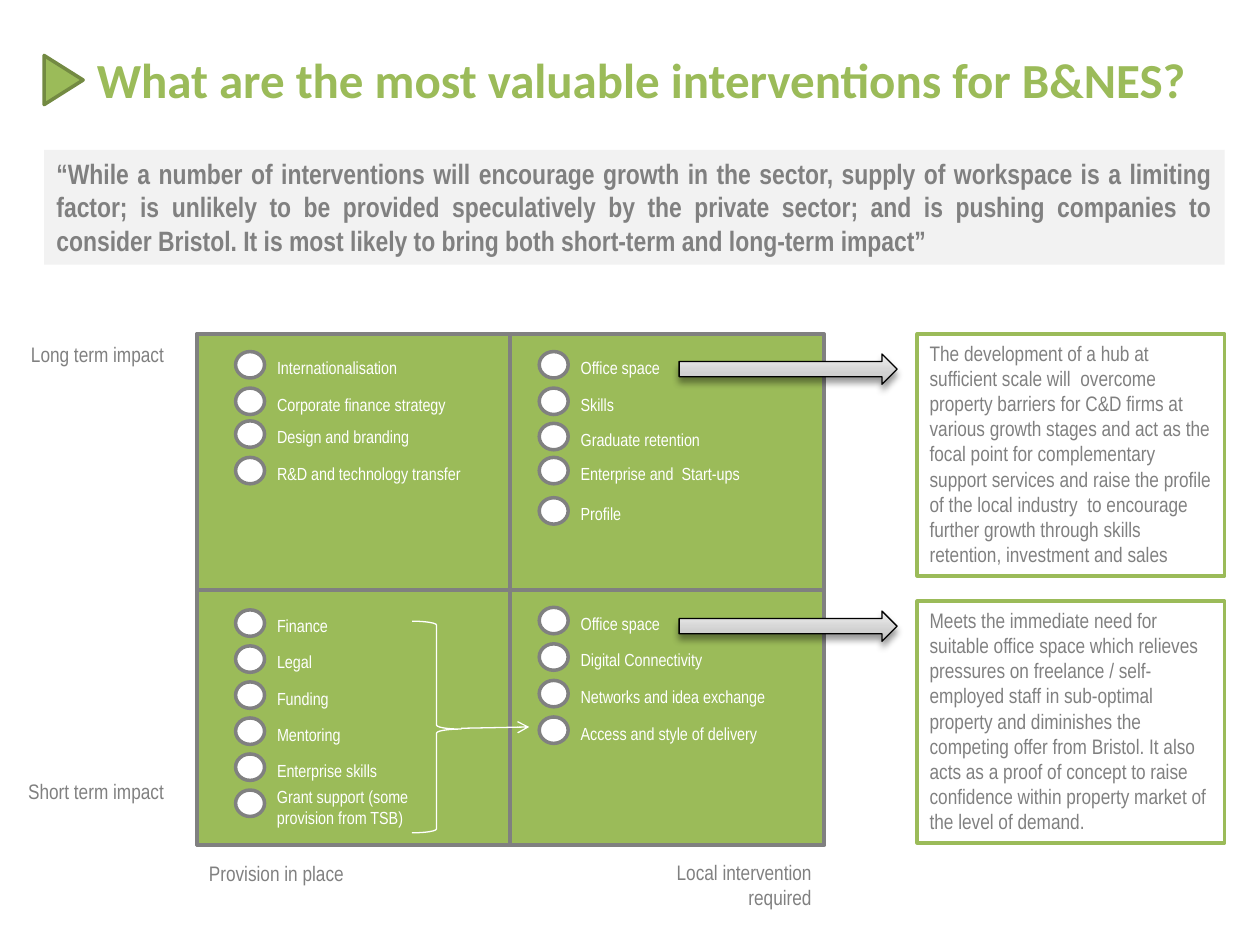
import pptx
import pptx.util
from pptx.dml.color import RGBColor
from pptx.enum.dml import MSO_LINE
from pptx.enum.shapes import MSO_CONNECTOR, MSO_SHAPE
from pptx.enum.text import MSO_ANCHOR, MSO_AUTO_SIZE, PP_ALIGN
from pptx.oxml import parse_xml
from pptx.oxml.ns import nsdecls

GREEN = RGBColor(0x9B, 0xBB, 0x59)
MOSS = RGBColor(0x73, 0x8A, 0x42)
GREY = RGBColor(0x80, 0x80, 0x80)
PALE = RGBColor(0xF2, 0xF2, 0xF2)
WHITE = RGBColor(0xFF, 0xFF, 0xFF)
BLACK = RGBColor(0, 0, 0)

# The slide is a grid of 100 columns by 75 rows of square cells.
WIDE, HIGH = 100, 75
CELL = pptx.util.Inches(10) // WIDE

LEFT, TOP, COL, ROW = 15.6, 26.5, 24.9, 20.3  # the two-by-two matrix
DOT_W, DOT_H = 2.3, 2.1

LISTS = [  # column of the dots, rows of the dots, labels
    (18.7, [27.9, 30.8, 33.4, 36.3],
     ["Internationalisation", "Corporate finance strategy",
      "Design and branding", "R&D and technology transfer"]),
    (42.8, [27.9, 30.8, 33.6, 36.3, 39.5],
     ["Office space", "Skills", "Graduate retention",
      "Enterprise and  Start-ups", "Profile"]),
    (18.7, [48.4 + 2.86 * n for n in range(6)],
     ["Finance", "Legal", "Funding", "Mentoring", "Enterprise skills",
      "Grant support (some provision from TSB)"]),
    (42.8, [48.2 + 2.9 * n for n in range(4)],
     ["Office space", "Digital Connectivity", "Networks and idea exchange",
      "Access and style of delivery"]),
]

NOTES = [
    "The development of a hub at sufficient scale will  overcome property "
    "barriers for C&D firms at various growth stages and act as the focal "
    "point for complementary support services and raise the profile of the "
    "local industry  to encourage further growth through skills retention, "
    "investment and sales",
    "Meets the immediate need for suitable office space which relieves "
    "pressures on freelance / self-employed staff in sub-optimal property "
    "and diminishes the  competing offer from Bristol. It also acts as a "
    "proof of concept to raise confidence within property market of the "
    "level of demand.",
]

QUOTE = (
    "“While a number of interventions will encourage growth in the sector, "
    "supply of workspace is a limiting factor; is unlikely to be provided "
    "speculatively by the private sector; and is pushing companies to "
    "consider Bristol. It is most likely to bring both short-term and "
    "long-term impact”")


def cells(*nums):
    """Turn grid cells into lengths."""
    return [round(n * CELL) for n in nums]


def write(shape, text, size, color, bold=False, align=PP_ALIGN.LEFT,
          font="Arial Narrow", anchor=MSO_ANCHOR.TOP, grow=True):
    frame = shape.text_frame
    frame.text = text
    frame.word_wrap = True
    frame.vertical_anchor = anchor
    if grow:
        frame.auto_size = MSO_AUTO_SIZE.SHAPE_TO_FIT_TEXT
    para = frame.paragraphs[0]
    para.alignment = align
    face = para.runs[0].font
    face.name, face.size, face.bold = font, pptx.util.Pt(size), bold
    face.color.rgb = color


def label(slide, box, text, size, color, **look):
    write(slide.shapes.add_textbox(*cells(*box)), text, size, color, **look)


def block(slide, kind, box, fill=None, line=None, width=2):
    shape = slide.shapes.add_shape(kind, *cells(*box))
    shape.shadow.inherit = False
    if fill is None:
        shape.fill.background()
    else:
        shape.fill.solid()
        shape.fill.fore_color.rgb = fill
    if line is None:
        shape.line.fill.background()
    else:
        shape.line.color.rgb = line
        shape.line.width = pptx.util.Pt(width)
    return shape


def rule(slide, ends, color, width):
    line = slide.shapes.add_connector(MSO_CONNECTOR.STRAIGHT, *cells(*ends))
    line.line.color.rgb = color
    line.line.width = pptx.util.Pt(width)
    line._element.spPr.append(parse_xml(f"<a:effectLst {nsdecls('a')}/>"))
    return line


def matrix(slide):
    right, base = LEFT + 2 * COL, TOP + 2 * ROW
    area = block(slide, MSO_SHAPE.RECTANGLE,
                 (LEFT, TOP, 2 * COL, 2 * ROW), GREEN, GREY)
    for n in range(3):
        x, y = LEFT + n * COL, TOP + n * ROW
        down = rule(slide, (x, TOP, x, base), GREY, 2.25)
        across = rule(slide, (LEFT, y, right, y), GREY, 2.25)
        if n == 1:
            down.begin_connect(area, 0)
            down.end_connect(area, 2)
            across.begin_connect(area, 1)
            across.end_connect(area, 3)


def items(slide, x, tops, names):
    """Draw a list of dots with their labels centred beside them."""
    for top, name in zip(tops, names):
        block(slide, MSO_SHAPE.OVAL, (x, top, DOT_W, DOT_H), WHITE, GREY)
        wide, high = (15.6, 4) if len(name) > 30 else (17.9, 2.5)
        mid = top + DOT_H / 2 + 0.15
        label(slide, (x + DOT_W, mid - high / 2, wide, high), name, 10, WHITE)


def brace(slide):
    """Draw the brace and the thin arrow that leads from it."""
    shape = block(slide, MSO_SHAPE.RIGHT_BRACE, (32.7, 49.3, 3.9, 16.8),
                  None, WHITE, 0.75)
    shape.adjustments[0], shape.adjustments[1] = 0.08, 0.51
    line = rule(slide, (36.6, 57.8, 42, 57.7), WHITE, 0.75)
    line.line.dash_style = MSO_LINE.SOLID
    line.line._get_or_add_ln().append(
        parse_xml(f'<a:tailEnd {nsdecls("a")} type="arrow"/>'))


def arrow(slide, top):
    """Draw a block arrow with a grey gradient and a soft shadow."""
    shape = block(slide, MSO_SHAPE.RIGHT_ARROW, (53.9, top, 17.3, 2.4),
                  WHITE, BLACK, 0.75)
    stops = "".join(
        f'<a:gs pos="{at * 1000}"><a:srgbClr val="{tone}"/></a:gs>'
        for at, tone in [(0, "BDBDBD"), (35, "D1D1D1"), (100, "EEEEEE")])
    props = shape._element.spPr
    props.replace(props.find("{*}solidFill"), parse_xml(
        f'<a:gradFill {nsdecls("a")} rotWithShape="1"><a:gsLst>{stops}'
        '</a:gsLst><a:lin ang="16200000" scaled="0"/></a:gradFill>'))
    props.replace(props.find("{*}effectLst"), parse_xml(
        f'<a:effectLst {nsdecls("a")}><a:outerShdw blurRad="50800" '
        'dist="38100" dir="5400000" rotWithShape="0">'
        '<a:srgbClr val="000000"><a:alpha val="40000"/></a:srgbClr>'
        '</a:outerShdw></a:effectLst>'))


def main():
    deck = pptx.Presentation()
    deck.slide_width, deck.slide_height = cells(WIDE, HIGH)
    slide = deck.slides.add_slide(deck.slide_layouts[6])

    label(slide, (6.7, 0, 93.3, 12.5),
          "What are the most valuable interventions for B&NES?", 28, GREEN,
          bold=True, font="Calibri", anchor=MSO_ANCHOR.MIDDLE, grow=False)
    mark = block(slide, MSO_SHAPE.ISOSCELES_TRIANGLE, (3.1, 4.8, 3.9, 3.1),
                 GREEN, MOSS)
    mark.rotation = 90
    banner = block(slide, MSO_SHAPE.RECTANGLE, (3.5, 11.9, 93.7, 9.1), PALE)
    write(banner, QUOTE, 16, GREY, bold=True, align=PP_ALIGN.JUSTIFY)

    matrix(slide)
    for x, y, high, text, align in [
            (0, 26.6, 2.8, "Long term impact", PP_ALIGN.RIGHT),
            (0, 61.3, 2.8, "Short term impact", PP_ALIGN.RIGHT),
            (51.4, 67.7, 4.6, "Local intervention required", PP_ALIGN.RIGHT),
            (15.6, 67.8, 2.8, "Provision in place", PP_ALIGN.LEFT)]:
        label(slide, (x, y, 14, high), text, 12, GREY, align=align)
    for x, tops, names in LISTS:
        items(slide, x, tops, names)
    brace(slide)

    for n, note in enumerate(NOTES):
        arrow(slide, 28.1 + 20.4 * n)
        card = block(slide, MSO_SHAPE.RECTANGLE,
                     (72.8, TOP + 21.2 * n, 24.4, 19.2), WHITE, GREEN)
        write(card, note, 12, GREY)

    deck.save("out.pptx")


if __name__ == "__main__":
    main()
